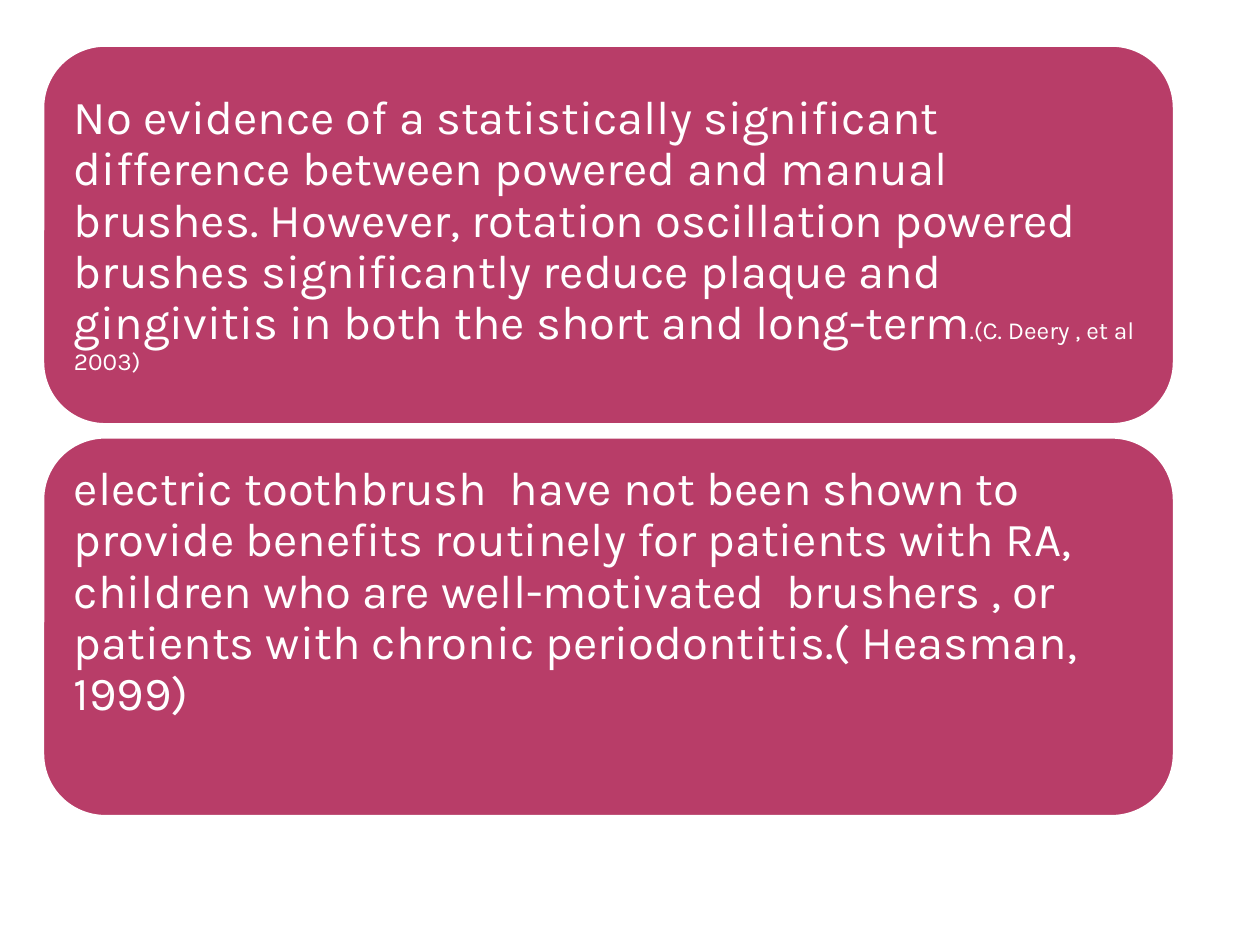
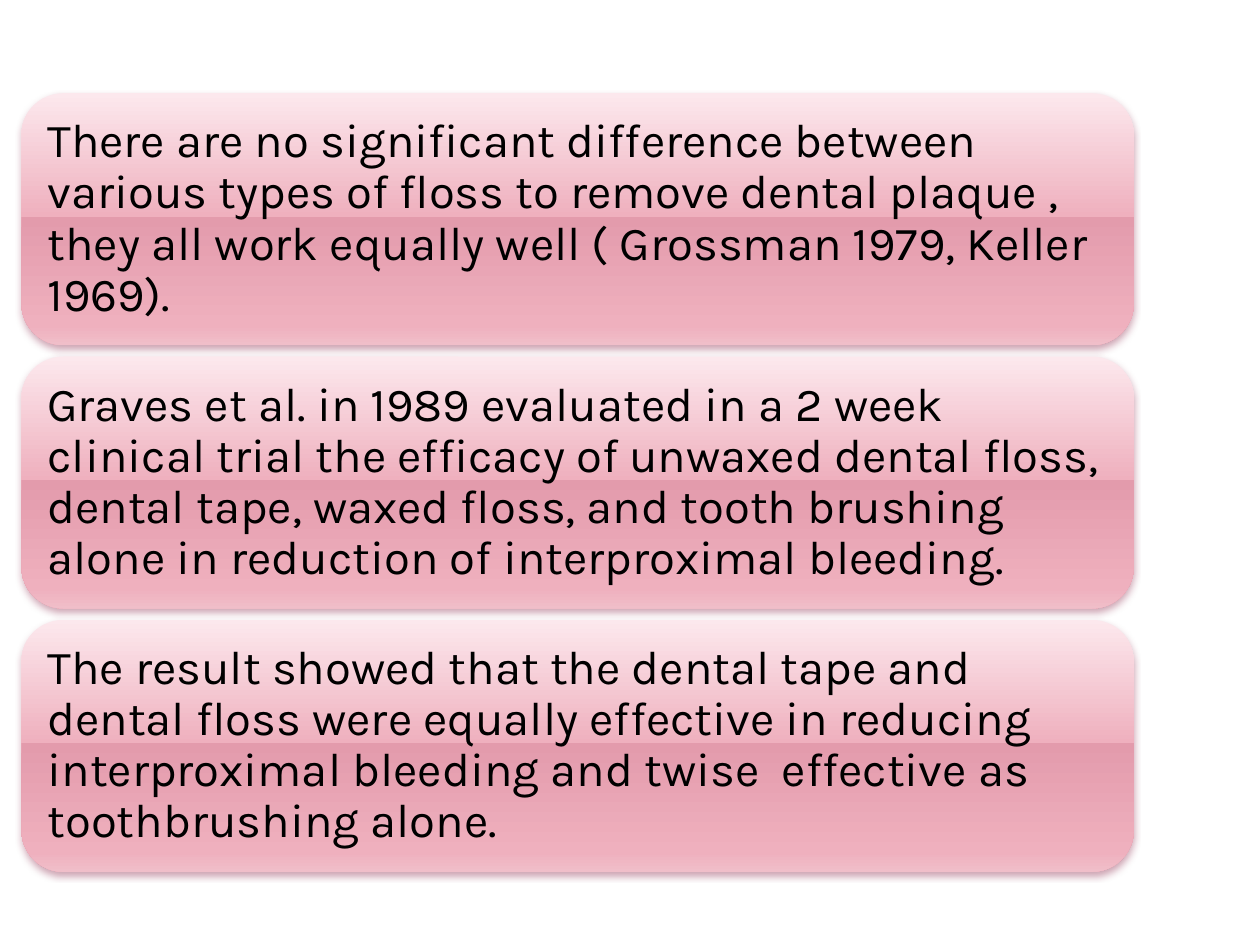
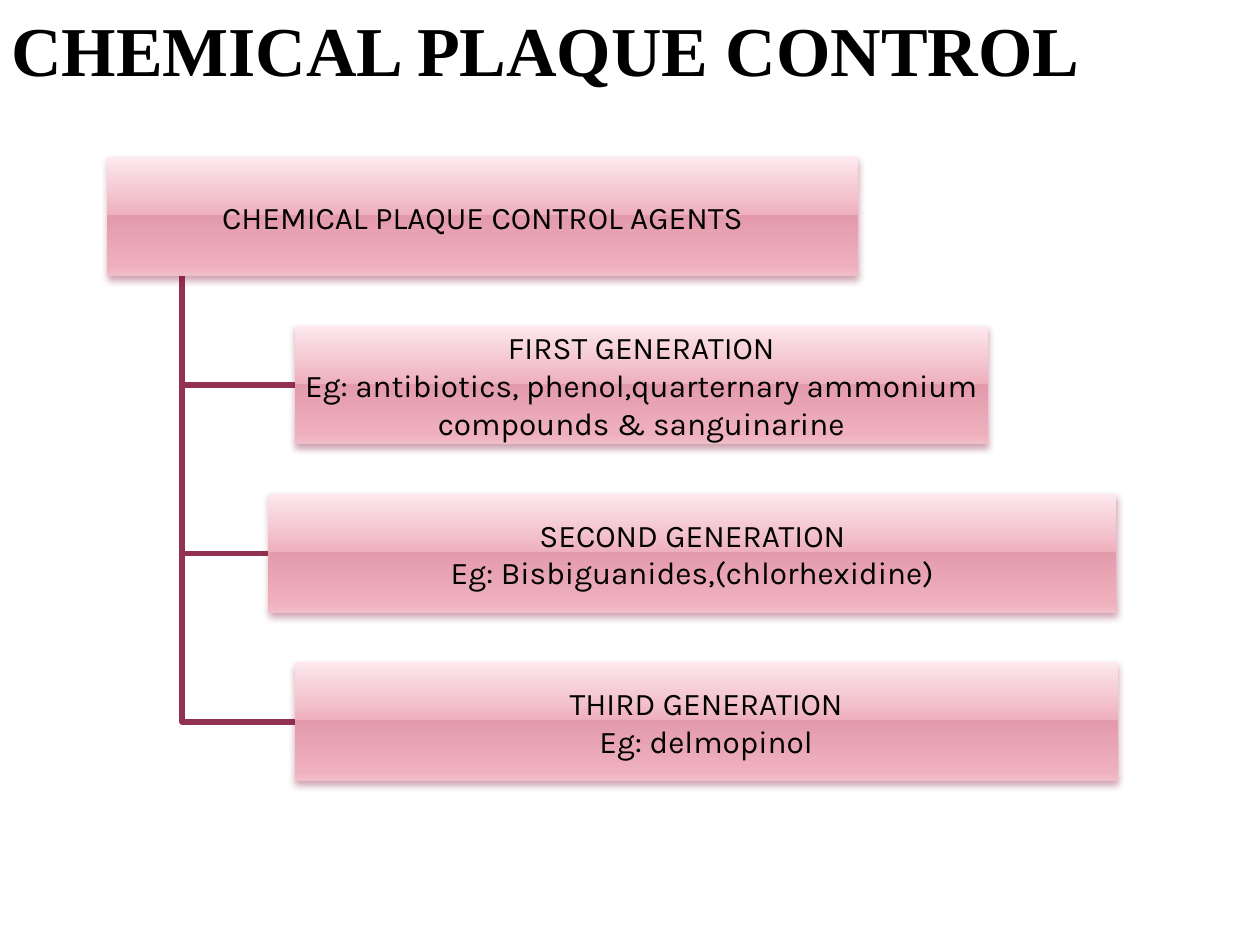
from lxml import etree
from pptx import Presentation
from pptx import util as u
from pptx.dml.color import RGBColor
from pptx.enum import shapes, text
from pptx.oxml.ns import qn

COLORS = {
    "white": "FFFFFF",
    "black": "000000",
    "berry": "B83D68",
    "branch": "933153",
    "shadow": "7F1238",
}
GLOSS = [(0, "FCE8ED"), (49, "EFB0BE"), (49, "E39BAC"), (92, "EFB0BE"), (100, "F0BEC9")]
COLUMNS, ROWS = 100, 75
BODY_FONT, TITLE_FONT = "Karla", "Times New Roman"
LINE_WIDTH = 3.15


def rgb(name):
    return RGBColor.from_string(COLORS[name])


def add_node(parent, tag, **attributes):
    return etree.SubElement(parent, qn(tag), {k: str(v) for k, v in attributes.items()})


class Deck:
    def __init__(self):
        self.prs = Presentation()
        self.prs.slide_width, self.prs.slide_height = u.Inches(10), u.Inches(7.5)
        self.column = self.prs.slide_width / COLUMNS
        self.row = self.prs.slide_height / ROWS
        self.slide = None

    def new_slide(self):
        self.slide = self.prs.slides.add_slide(self.prs.slide_layouts[6])

    def place(self, left, top, width, height):
        return (round(left * self.column), round(top * self.row),
                round(width * self.column), round(height * self.row))

    def add_text(self, frame, paragraphs, color, font=BODY_FONT, bold=False,
                 align=text.PP_ALIGN.CENTER, spacing=1.0):
        frame.word_wrap = True
        for index, runs in enumerate(paragraphs):
            paragraph = frame.paragraphs[0] if index == 0 else frame.add_paragraph()
            paragraph.alignment = align
            paragraph.line_spacing = spacing
            for words, size in runs:
                run = paragraph.add_run()
                run.text = words
                run.font.size = u.Pt(size)
                run.font.name = font
                run.font.bold = bold
                run.font.color.rgb = rgb(color)

    def title(self, words, area):
        box = self.slide.shapes.add_textbox(*self.place(*area))
        self.add_text(box.text_frame, [[(words, 40)]], "black", TITLE_FONT, bold=True)

    def panel(self, kind, area, inset, bottom_inset=None):
        panel = self.slide.shapes.add_shape(kind, *self.place(*area))
        panel.shadow.inherit = False
        frame = panel.text_frame
        frame.vertical_anchor = text.MSO_ANCHOR.MIDDLE
        frame.margin_left = frame.margin_right = frame.margin_top = u.Inches(inset)
        frame.margin_bottom = u.Inches(bottom_inset or inset)
        return panel

    def gloss(self, panel):
        panel.line.fill.background()
        panel.fill.gradient()
        panel.fill.gradient_angle = 270
        properties = panel.element.spPr
        stops = properties.find(qn("a:gradFill")).find(qn("a:gsLst"))
        for stop in list(stops):
            stops.remove(stop)
        for position, color in GLOSS:
            stop = add_node(stops, "a:gs", pos=position * 1000)
            add_node(stop, "a:srgbClr", val=color)
        shadow = add_node(properties.find(qn("a:effectLst")), "a:outerShdw",
                          blurRad=int(u.Pt(4)), dist=int(u.Pt(2)), dir=90 * 60000,
                          algn="ctr", rotWithShape=0)
        tint = add_node(shadow, "a:srgbClr", val=COLORS["shadow"])
        add_node(tint, "a:alpha", val=38000)

    def statement(self, area, runs, glossy=False, bottom_inset=None):
        panel = self.panel(shapes.MSO_SHAPE.ROUNDED_RECTANGLE, area, 0.11, bottom_inset)
        if glossy:
            self.gloss(panel)
        else:
            panel.fill.solid()
            panel.fill.fore_color.rgb = rgb("berry")
            panel.line.color.rgb = rgb("white")
            panel.line.width = u.Pt(LINE_WIDTH)
        self.add_text(panel.text_frame, [runs], "black" if glossy else "white",
                      align=text.PP_ALIGN.LEFT, spacing=0.9)

    def node(self, area, lines):
        panel = self.panel(shapes.MSO_SHAPE.RECTANGLE, area, 0.01)
        self.gloss(panel)
        self.add_text(panel.text_frame, [[(line, 18)] for line in lines], "black")

    def branch(self, trunk, top, end, level):
        points = [(round(x * self.column), round(y * self.row))
                  for x, y in [(trunk, top), (trunk, level), (end, level)]]
        builder = self.slide.shapes.build_freeform(*points[0])
        builder.add_line_segments(points[1:], close=False)
        elbow = builder.convert_to_shape()
        elbow.shadow.inherit = False
        elbow.fill.background()
        elbow.line.color.rgb = rgb("branch")
        elbow.line.width = u.Pt(LINE_WIDTH)


def powered_brushes(deck):
    deck.new_slide()
    findings = [
        ([("No evidence of a statistically significant difference between powered and "
           "manual brushes. However, rotation oscillation powered brushes significantly "
           "reduce plaque and gingivitis in both the short and long-term", 27),
          (".(C. Deery , et al 2003)", 14)], None),
        ([("electric toothbrush  have not been shown to provide benefits routinely for "
           "patients with RA, children who are well-motivated  brushers , or patients "
           "with chronic periodontitis.( Heasman, 1999)", 27)], 0.65),
    ]
    for index, (runs, bottom_inset) in enumerate(findings):
        deck.statement((3.3, 3.5 + 31.1 * index, 90, 30.3), runs, bottom_inset=bottom_inset)


def dental_floss(deck):
    deck.new_slide()
    findings = [
        "There are no significant difference between various types of floss to remove "
        "dental plaque , they all work equally well ( Grossman 1979, Keller 1969).",
        "Graves et al. in 1989 evaluated in a 2 week clinical trial the efficacy of "
        "unwaxed dental floss, dental tape, waxed floss, and tooth brushing alone in "
        "reduction of interproximal bleeding.",
        "The result showed that the dental tape and dental floss were equally effective "
        "in reducing interproximal bleeding and twise  effective as toothbrushing alone.",
    ]
    for index, finding in enumerate(findings):
        deck.statement((1.7, 7.4 + 20.9 * index, 88.3, 20), [(finding, 27)], glossy=True)


def chemical_control(deck):
    deck.new_slide()
    deck.title("CHEMICAL PLAQUE CONTROL", (-1.7, 0, 90, 12.5))
    top, step, height = 12.5, 13.36, 9.4
    root_left, root_width = 8.5, 59.6
    generations = [
        (23.4, 55, ["FIRST GENERATION",
                    "Eg: antibiotics, phenol,quarternary ammonium compounds & sanguinarine"]),
        (21.3, 67.3, ["SECOND GENERATION", "Eg: Bisbiguanides,(chlorhexidine)"]),
        (23.4, 65.3, ["THIRD GENERATION", "Eg: delmopinol"]),
    ]
    levels = [top + step * (index + 1) for index in range(len(generations))]
    for (left, _, _), level in reversed(list(zip(generations, levels))):
        deck.branch(root_left + root_width / 10, top + height, left, level + height / 2)
    deck.node((root_left, top, root_width, height), ["CHEMICAL PLAQUE CONTROL AGENTS"])
    for (left, width, lines), level in zip(generations, levels):
        deck.node((left, level, width, height), lines)


def main():
    deck = Deck()
    powered_brushes(deck)
    dental_floss(deck)
    chemical_control(deck)
    deck.prs.save("out.pptx")


if __name__ == "__main__":
    main()
